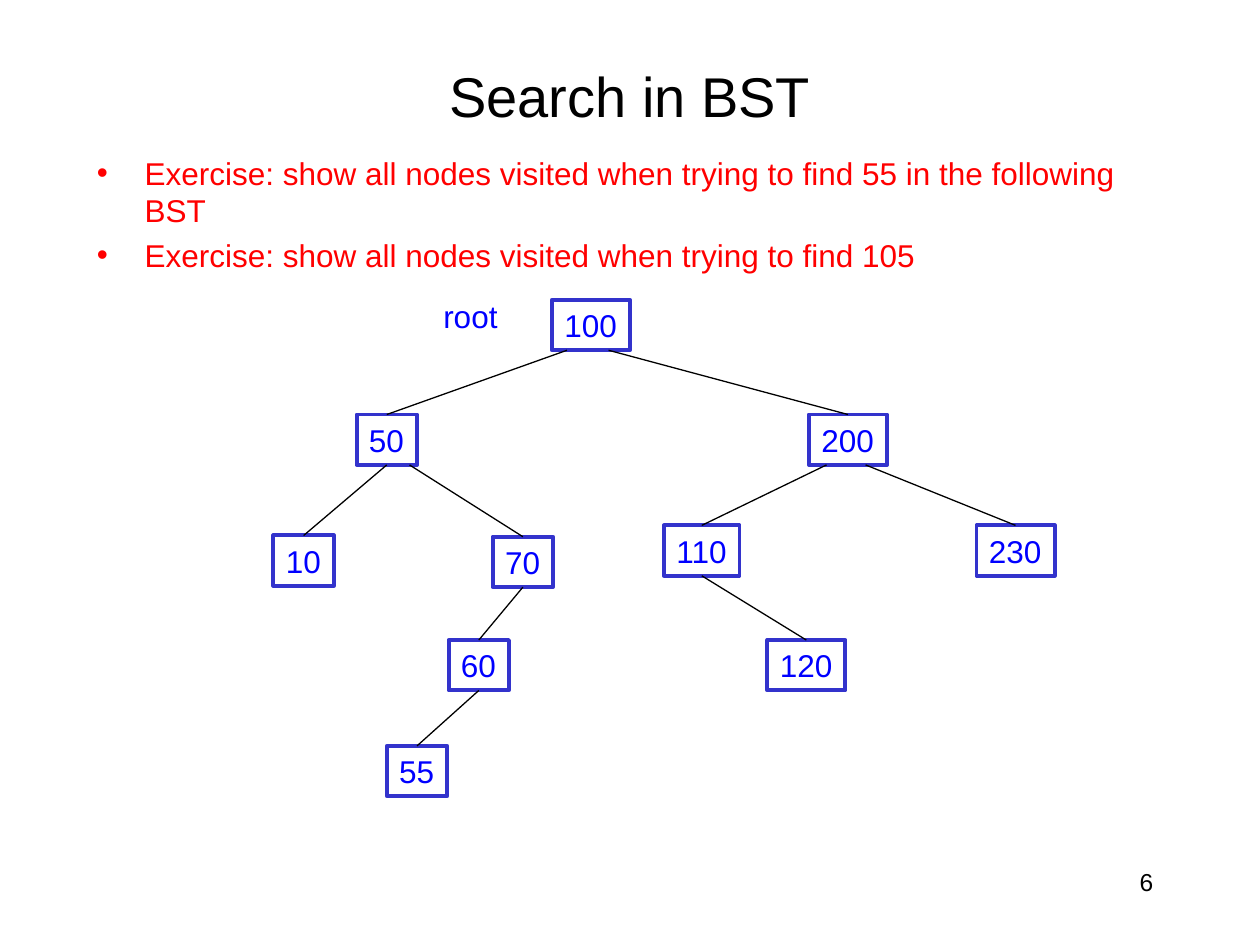
from lxml import etree
from pptx import Presentation
from pptx.dml.color import RGBColor
from pptx.enum.shapes import MSO_CONNECTOR, MSO_SHAPE
from pptx.enum.text import MSO_ANCHOR, PP_ALIGN
from pptx.oxml.ns import qn
from pptx.util import Inches, Pt

RECT = MSO_SHAPE.RECTANGLE
LINE = MSO_CONNECTOR.STRAIGHT
LEFT, MID, RIGHT = PP_ALIGN.LEFT, PP_ALIGN.CENTER, PP_ALIGN.RIGHT
TOP, CENTER = MSO_ANCHOR.TOP, MSO_ANCHOR.MIDDLE

HUES = {"ink": "000000", "task": "FF0000", "key": "0000FF", "edge": "3333CC"}
TALL = 0.4

NODES = {
    "100": (4.38, 2.38, 0.62),
    "50": (2.83, 3.29, 0.48),
    "200": (6.42, 3.29, 0.62),
    "10": (2.17, 4.25, 0.48),
    "70": (3.91, 4.26, 0.48),
    "110": (5.27, 4.17, 0.6),
    "230": (7.75, 4.17, 0.62),
    "60": (3.56, 5.08, 0.48),
    "120": (6.09, 5.08, 0.62),
    "55": (3.07, 5.92, 0.48),
}
LINKS = [
    ("100", "50", -0.19),
    ("100", "200", 0.14),
    ("50", "10", 0),
    ("50", "70", 0.18),
    ("200", "110", -0.17),
    ("200", "230", 0.14),
    ("70", "60", 0),
    ("60", "55", 0),
    ("110", "120", 0),
]
TASKS = [
    "Exercise: show all nodes visited when trying to find 55 in the following BST",
    "Exercise: show all nodes visited when trying to find 105",
]


def color(name):
    return RGBColor.from_string(HUES[name])


def write(frame, lines, size=18, hue="key", align=LEFT, anchor=TOP,
          wrap=True, bullet=None):
    frame.word_wrap = wrap
    frame.vertical_anchor = anchor
    for i, line in enumerate(lines):
        para = frame.paragraphs[0] if i == 0 else frame.add_paragraph()
        para.alignment = align
        run = para.add_run()
        run.text = line
        run.font.name = "Arial"
        run.font.size = Pt(size)
        run.font.color.rgb = color(hue)
        if bullet:
            para.space_before = Pt(4)
            props = para._p.get_or_add_pPr()
            props.set("marL", str(Inches(0.38)))
            props.set("indent", str(-Inches(0.38)))
            etree.SubElement(props, qn("a:buFont")).set("typeface", "Arial")
            etree.SubElement(props, qn("a:buChar")).set("char", bullet)


class Board:
    def __init__(self, slide):
        self.slide = slide

    def text(self, x, y, w, h, *lines, **style):
        box = self.slide.shapes.add_textbox(
            Inches(x), Inches(y), Inches(w), Inches(h))
        write(box.text_frame, lines, **style)

    def node(self, key, x, y, w):
        box = self.slide.shapes.add_shape(
            RECT, Inches(x), Inches(y), Inches(w), Inches(TALL))
        box.shadow.inherit = False
        box.fill.background()
        box.line.color.rgb = color("edge")
        box.line.width = Pt(2.25)
        write(box.text_frame, [key], wrap=False)

    def link(self, top, low, shift):
        x1, y1, w1 = NODES[top]
        x2, y2, w2 = NODES[low]
        line = self.slide.shapes.add_connector(
            LINE, Inches(x1 + w1 / 2 + shift), Inches(y1 + TALL),
            Inches(x2 + w2 / 2), Inches(y2))
        line.line.color.rgb = color("ink")
        line.line.width = Pt(0.75)
        etree.SubElement(line._element.spPr, qn("a:effectLst"))


def main():
    deck = Presentation()
    deck.slide_width, deck.slide_height = Inches(10), Inches(7.5)
    board = Board(deck.slides.add_slide(deck.slide_layouts[6]))
    board.text(7.17, 6.83, 2.08, 0.5, "6", size=14, hue="ink", align=RIGHT)
    board.text(0.75, 0.42, 8.5, 0.67, "Search in BST",
               size=32, hue="ink", align=MID, anchor=CENTER)
    board.text(0.67, 1.17, 8.58, 5.67, *TASKS, hue="task", bullet="•")
    board.text(3.42, 2.31, 0.63, TALL, "root", wrap=False)
    for key, place in NODES.items():
        board.node(key, *place)
    for link in LINKS:
        board.link(*link)
    deck.save("out.pptx")


if __name__ == "__main__":
    main()
